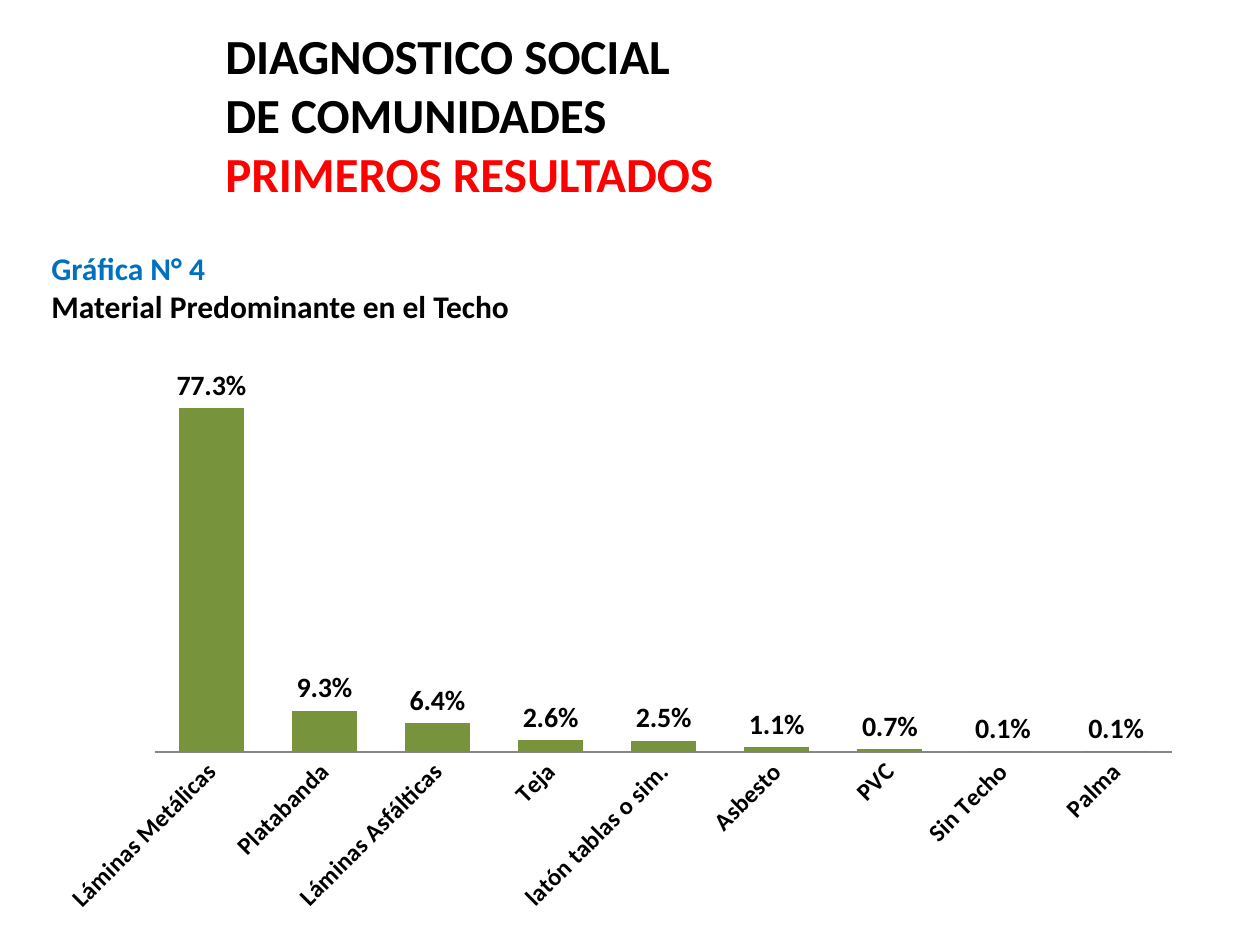
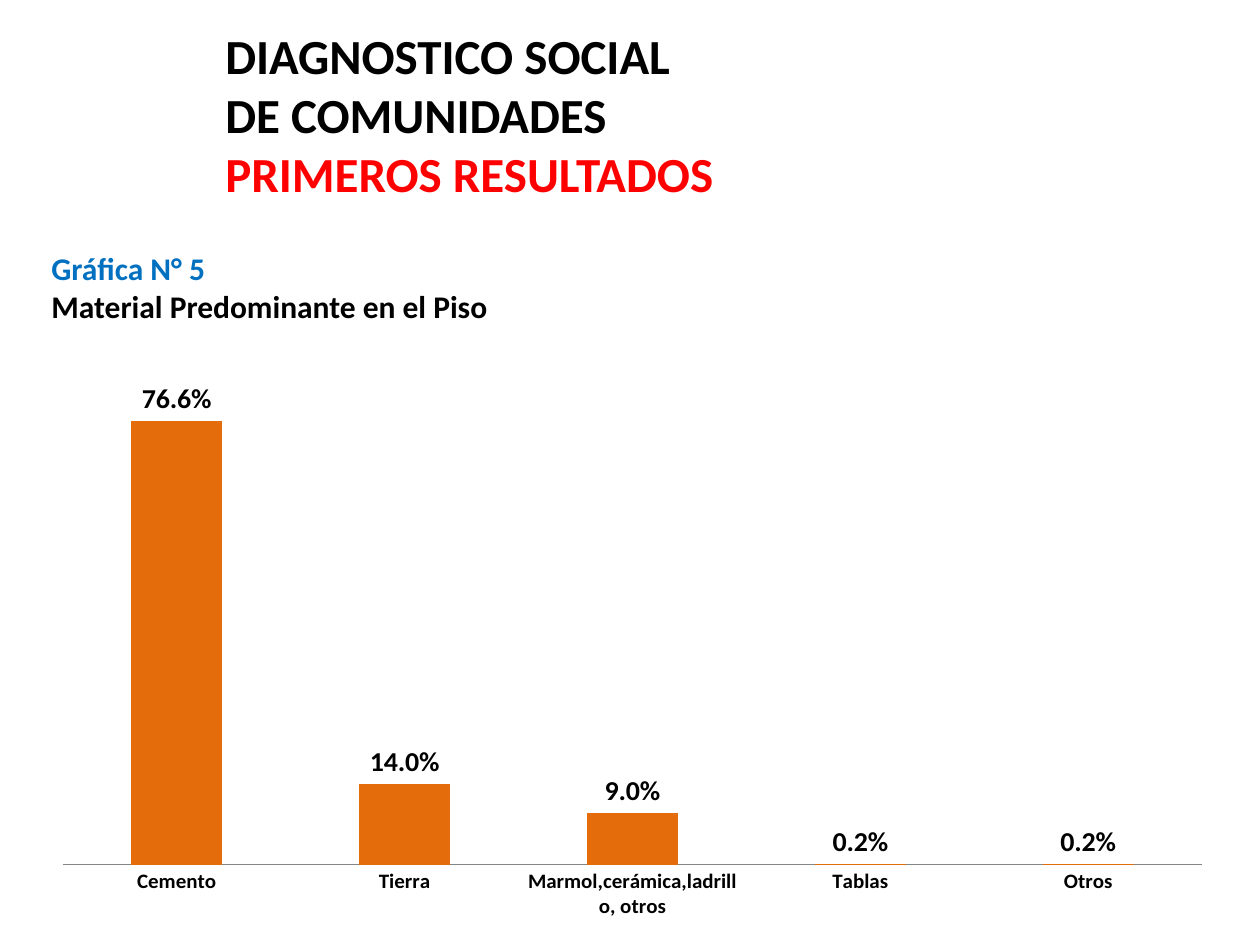
"""Builds two slides on the predominant housing materials."""
from lxml.etree import SubElement
from pptx import Presentation
from pptx.chart.data import CategoryChartData
from pptx.dml.color import RGBColor
from pptx.enum.chart import XL_CHART_TYPE as ChartType
from pptx.enum.chart import XL_LABEL_POSITION as LabelPosition
from pptx.enum.chart import XL_TICK_MARK as TickMark
from pptx.enum.text import MSO_ANCHOR as Anchor
from pptx.oxml.ns import qn
from pptx.util import Inches, Pt

BLACK = RGBColor(0x00, 0x00, 0x00)
RED = RGBColor(0xFF, 0x00, 0x00)
BLUE = RGBColor(0x00, 0x70, 0xC0)
GREEN = RGBColor(0x77, 0x93, 0x3C)
ORANGE = RGBColor(0xE4, 0x6C, 0x0A)
GRAY = RGBColor(0x86, 0x86, 0x86)

FONT = "Calibri"
PERCENT = "0.0%"
WIDTH, HEIGHT = Inches(10), Inches(7.5)

TITLE_LINES = [
    ("DIAGNOSTICO SOCIAL", BLACK),
    ("DE COMUNIDADES", BLACK),
    ("PRIMEROS RESULTADOS", RED),
]
ROOF = {
    "Láminas Metálicas": 0.773,
    "Platabanda": 0.093,
    "Láminas Asfálticas": 0.064,
    "Teja": 0.026,
    "latón tablas o sim.": 0.025,
    "Asbesto": 0.011,
    "PVC": 0.007,
    "Sin Techo": 0.001,
    "Palma": 0.001,
}
FLOOR = {
    "Cemento": 0.766,
    "Tierra": 0.14,
    "Marmol,cerámica,ladrillo, otros": 0.09,
    "Tablas": 0.002,
    "Otros": 0.002,
}


def place(left, top, width, height):
    """Turn percentages of the slide into lengths."""
    return (int(WIDTH * left / 100), int(HEIGHT * top / 100),
            int(WIDTH * width / 100), int(HEIGHT * height / 100))


def set_font(font, size, color=BLACK, bold=True):
    """Give a font the deck's typeface with the given format."""
    font.name, font.size, font.bold = FONT, Pt(size), bold
    font.color.rgb = color


def add_text(page, area, lines, size, anchor=Anchor.TOP):
    """Add a text box with one paragraph per (text, color) line."""
    frame = page.shapes.add_textbox(*place(*area)).text_frame
    frame.word_wrap = True
    frame.vertical_anchor = anchor
    for index, (text, color) in enumerate(lines):
        para = frame.paragraphs[0] if index == 0 else frame.add_paragraph()
        span = para.add_run()
        span.text = text
        set_font(span.font, size, color)


def set_plot_area(chart, **shares):
    """Fix the inner plot area by shares of the chart's size."""
    area = chart.element.xpath("c:chart/c:plotArea")[0]
    for old in area.findall(qn("c:layout")):
        area.remove(old)
    layout = SubElement(area, qn("c:layout"))
    area.insert(0, layout)
    manual = SubElement(layout, qn("c:manualLayout"))
    settings = {"layoutTarget": "inner", "xMode": "edge", "yMode": "edge"}
    for name, value in {**settings, **shares}.items():
        SubElement(manual, qn(f"c:{name}")).set("val", str(value))


def style_axes(chart, size, angle):
    """Show only the category axis, with its labels turned by angle."""
    values = chart.value_axis
    values.visible = False
    values.has_major_gridlines = False
    values.minimum_scale, values.maximum_scale = 0, 0.9
    values.tick_labels.number_format = PERCENT
    values.tick_labels.number_format_is_linked = False
    axis = chart.category_axis
    axis.major_tick_mark = axis.minor_tick_mark = TickMark.NONE
    axis.format.line.color.rgb = GRAY
    axis.format.line.width = Pt(0.75)
    set_font(axis.tick_labels.font, size)
    body = chart.element.xpath(".//c:catAx/c:txPr/a:bodyPr")[0]
    body.set("rot", str(angle * 60000))


def add_columns(page, area, shares, color, plot_area, size, angle=0,
                gap=150, overlap=0):
    """Add a column chart with a percentage above each column."""
    data = CategoryChartData(number_format=PERCENT)
    data.categories = list(shares)
    data.add_series("Series 1", list(shares.values()))
    chart = page.shapes.add_chart(
        ChartType.COLUMN_CLUSTERED, *place(*area), data).chart
    chart.has_legend = chart.has_title = False
    set_font(chart.font, 10, bold=False)
    style_axes(chart, size, angle)
    set_plot_area(chart, **plot_area)
    plot = chart.plots[0]
    plot.vary_by_categories = False
    plot.gap_width, plot.overlap = gap, overlap
    fill = plot.series[0].format.fill
    fill.solid()
    fill.fore_color.rgb = color
    labels = plot.series[0].data_labels
    labels.show_value = True
    labels.position = LabelPosition.OUTSIDE_END
    labels.number_format = PERCENT
    labels.number_format_is_linked = False
    set_font(labels.font, 16)


def add_page(deck, number, subject):
    """Add a slide with the shared title and the chart's heading."""
    page = deck.slides.add_slide(deck.slide_layouts[6])
    add_text(page, (16.9, 2.13, 85, 19.87), TITLE_LINES, 28, Anchor.MIDDLE)
    heading = [(f"Gráfica N° {number}", BLUE),
               (f"Material Predominante en el {subject}", BLACK)]
    add_text(page, (3.1, 25.73, 62.7, 9.47), heading, 18)
    return page


def main():
    """Build and save the deck."""
    deck = Presentation()
    deck.slide_width, deck.slide_height = WIDTH, HEIGHT
    add_columns(add_page(deck, 4, "Techo"), (3.1, 36, 91.8, 62.27), ROOF,
                GREEN, {"x": 0.1, "y": 0.02, "w": 0.88, "h": 0.68},
                size=14, angle=-45, gap=75)
    add_columns(add_page(deck, 5, "Piso"), (3.1, 35.07, 94.2, 62.13), FLOOR,
                ORANGE, {"x": 0.02, "y": 0.02, "w": 0.96, "h": 0.91},
                size=12, overlap=-25)
    deck.save("out.pptx")


if __name__ == "__main__":
    main()
